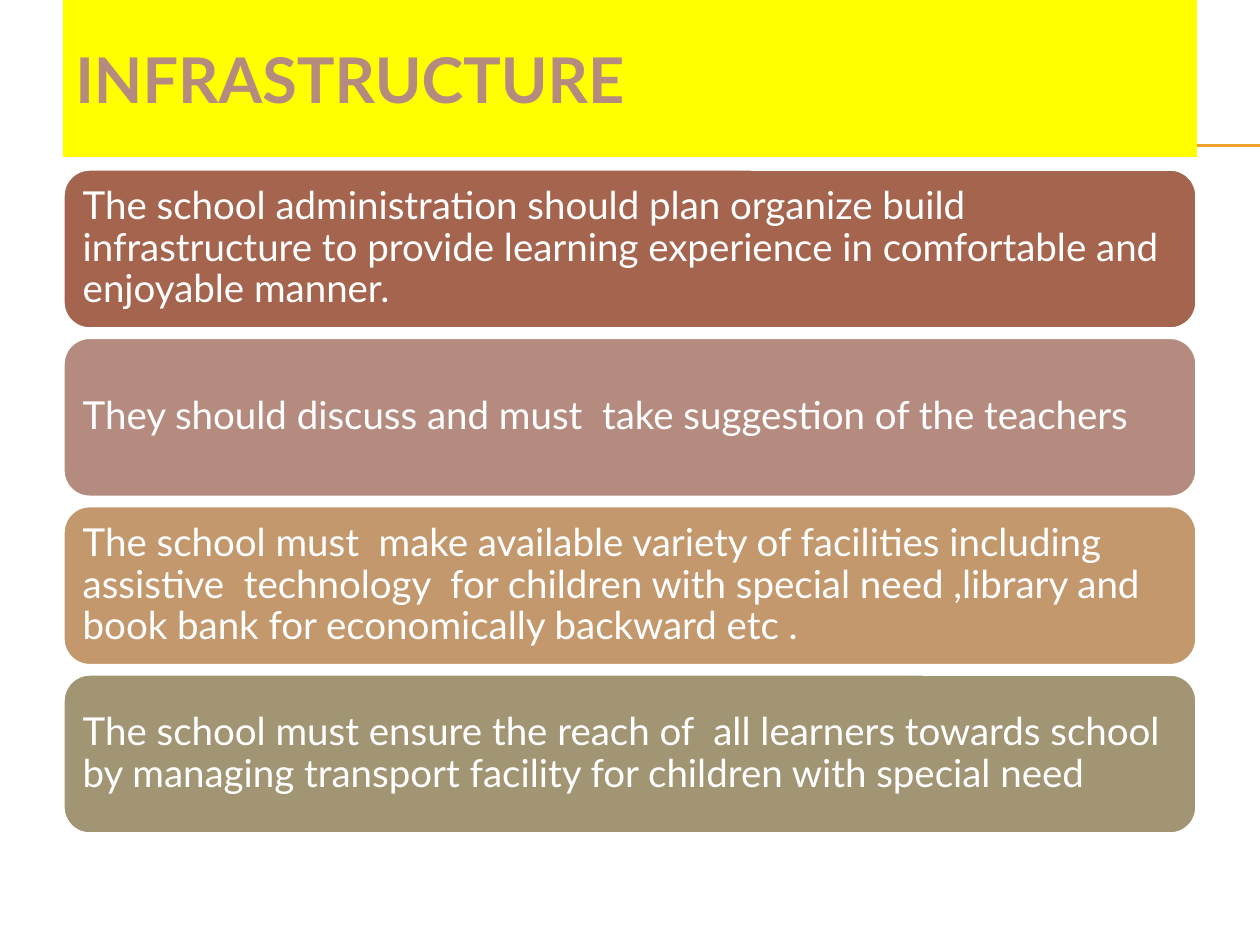
from lxml.etree import SubElement
from pptx import Presentation
from pptx.dml.color import RGBColor
from pptx.enum.shapes import MSO_CONNECTOR, MSO_SHAPE
from pptx.enum.text import MSO_ANCHOR, PP_ALIGN
from pptx.oxml.ns import qn
from pptx.util import Pt

EMU_PER_PX = 914400 / 126
FONT = "Lato"
COLOURS = {
    "rule": "F0A22E",
    "banner": "FFFF00",
    "title": "B58B80",
    "white": "FFFFFF",
    "rust": "A5644E",
    "rose": "B58B80",
    "tan": "C3986D",
    "olive": "A19574",
}
CARDS = [
    ("rust", "The school administration should plan organize build infrastructure "
             "to provide learning experience in comfortable and enjoyable manner."),
    ("rose", "They should discuss and must  take suggestion of the teachers"),
    ("tan", "The school must  make available variety of facilities including "
            "assistive  technology  for children with special need ,library and "
            "book bank for economically backward etc ."),
    ("olive", "The school must ensure the reach of  all learners towards school  "
              "by managing transport facility for children with special need"),
]
LEFT, WIDTH = 63, 1134
FIRST_CARD_TOP, LAST_CARD_TOP, CARD_HEIGHT = 169, 674, 160


def px(length):
    return round(length * EMU_PER_PX)


def colour(name):
    return RGBColor.from_string(COLOURS[name])


def add_rule(slide, y):
    line = slide.shapes.add_connector(
        MSO_CONNECTOR.STRAIGHT, px(71), px(y), px(1260), px(y))
    line.line.color.rgb = colour("rule")
    line.line.width = Pt(0.75)
    SubElement(line._element.spPr, qn("a:effectLst"))


def add_panel(slide, kind, top, height, fill):
    shape = slide.shapes.add_shape(kind, px(LEFT), px(top), px(WIDTH), px(height))
    shape.shadow.inherit = False
    shape.fill.solid()
    shape.fill.fore_color.rgb = colour(fill)
    shape.line.fill.background()
    return shape


def write_text(shape, text, size, text_colour, bold=False):
    frame = shape.text_frame
    frame.word_wrap = True
    frame.vertical_anchor = MSO_ANCHOR.MIDDLE
    frame.text = text
    paragraph = frame.paragraphs[0]
    paragraph.alignment = PP_ALIGN.LEFT
    font = paragraph.runs[0].font
    font.name = FONT
    font.size = Pt(size)
    font.bold = bold
    font.color.rgb = colour(text_colour)
    return frame


def add_title(slide, text):
    banner = add_panel(slide, MSO_SHAPE.RECTANGLE, 0, 157, "banner")
    write_text(banner, text, 36, "title", bold=True)


def add_card(slide, top, fill, text):
    card = add_panel(slide, MSO_SHAPE.ROUNDED_RECTANGLE, top, CARD_HEIGHT, fill)
    card.line.color.rgb = colour("white")
    card.line.width = Pt(2)
    frame = write_text(card, text, 22, "white")
    frame.margin_left = frame.margin_right = px(12)
    frame.margin_top = frame.margin_bottom = px(12)
    frame.paragraphs[0].line_spacing = 0.9


def main():
    presentation = Presentation()
    presentation.slide_width = px(1260)
    presentation.slide_height = px(945)
    slide = presentation.slides.add_slide(presentation.slide_layouts[6])

    for y in (145, 146):
        add_rule(slide, y)
    add_title(slide, "INFRASTRUCTURE")
    step = (LAST_CARD_TOP - FIRST_CARD_TOP) / (len(CARDS) - 1)
    for index, (fill, text) in enumerate(CARDS):
        add_card(slide, FIRST_CARD_TOP + index * step, fill, text)

    presentation.save("out.pptx")


if __name__ == "__main__":
    main()
